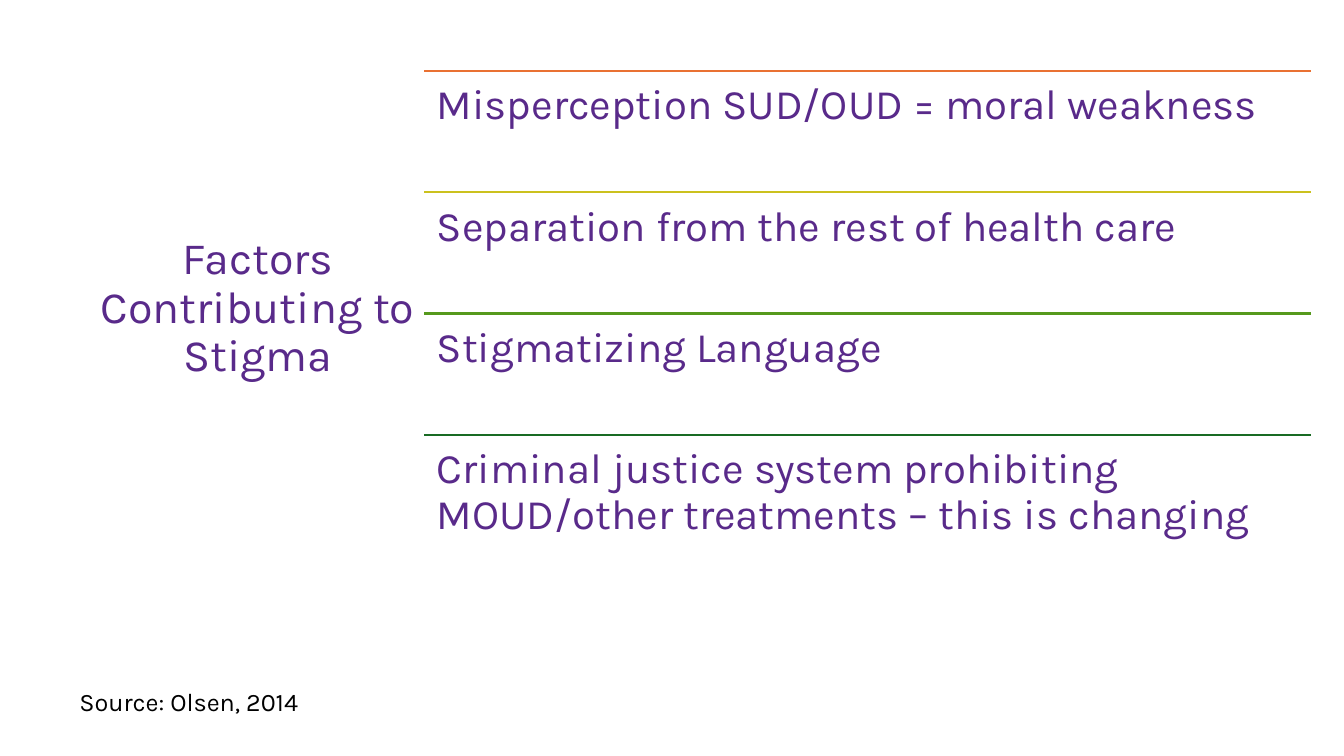
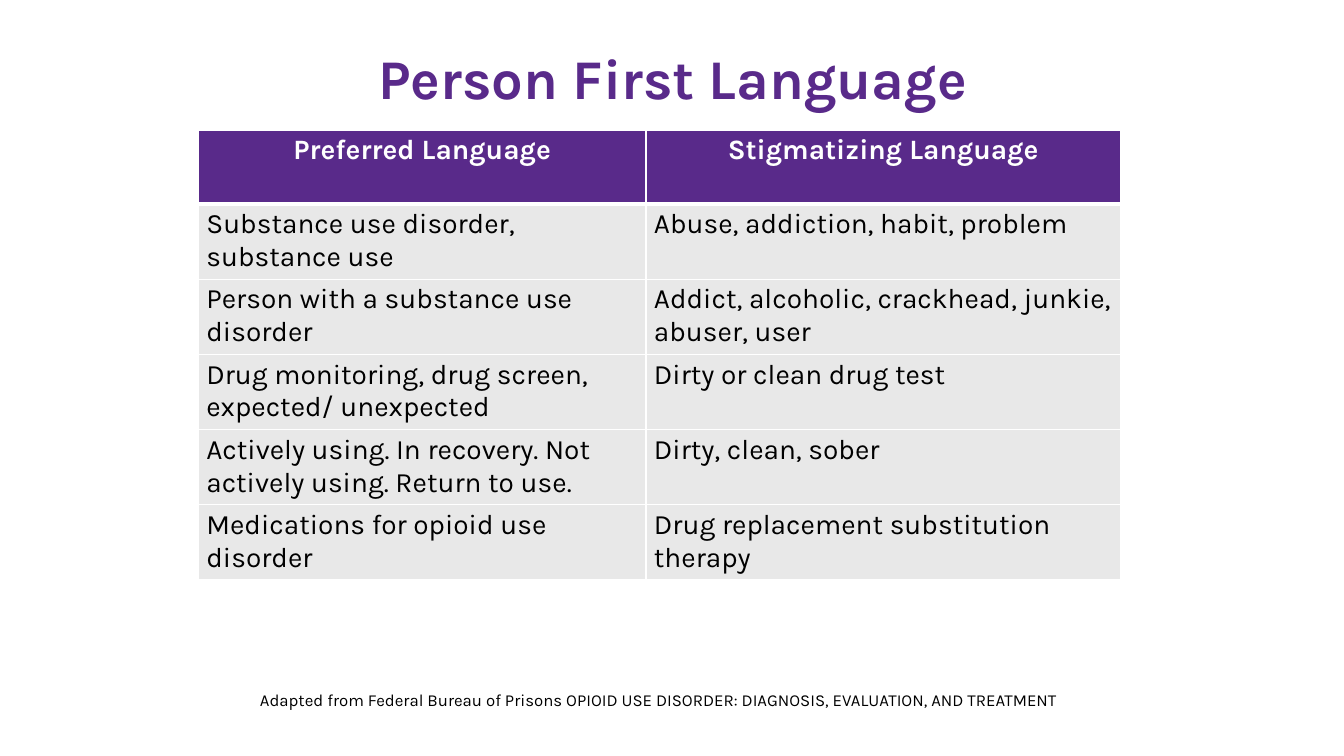
import dataclasses

import lxml.etree
import pptx
import pptx.dml.color
import pptx.enum.shapes
import pptx.enum.text
import pptx.oxml.ns
import pptx.util

Cm = pptx.util.Cm
Pt = pptx.util.Pt
Align = pptx.enum.text.PP_ALIGN
Anchor = pptx.enum.text.MSO_ANCHOR
qn = pptx.oxml.ns.qn

FONT = "Karla"
PURPLE, BLACK, WHITE, GREY = "592A8A", "000000", "FFFFFF", "E8E8E8"


@dataclasses.dataclass(frozen=True)
class Box:
    left: float
    top: float
    width: float
    height: float

    def lengths(self) -> list:
        return [Cm(v) for v in dataclasses.astuple(self)]


@dataclasses.dataclass(frozen=True)
class Style:
    size: float
    color: str = BLACK
    bold: bool = False
    align: Align = Align.LEFT
    spacing: float = 1.0
    anchor: Anchor = Anchor.TOP


@dataclasses.dataclass(frozen=True)
class Factor:
    text: str
    color: str


SIDE_TITLE = Style(32, PURPLE, False, Align.CENTER, 0.9, Anchor.MIDDLE)
TOP_TITLE = dataclasses.replace(SIDE_TITLE, size=40, bold=True)
FACTOR = Style(30, PURPLE, spacing=0.9)
HEADER = Style(20, WHITE, True, Align.CENTER)
BODY = Style(20)

FACTORS = [
    Factor("Misperception SUD/OUD = moral weakness", "E97132"),
    Factor("Separation from the rest of health care", "CBC11E"),
    Factor("Stigmatizing Language", "56991D"),
    Factor("Criminal justice system prohibiting MOUD/other treatments – this is changing", "196B24"),
]
FACTOR_BOX = Box(10.69, 1.78, 22.36, 3.06)

TABLE_BOX = Box(5, 3.28, 23.24, 11.16)
COLUMN_WIDTHS = (11.28, 11.96)
TERMS = [
    ("Preferred Language", "Stigmatizing Language"),
    ("Substance use disorder, substance use", "Abuse, addiction, habit, problem"),
    ("Person with a substance use disorder", "Addict, alcoholic, crackhead, junkie, abuser, user"),
    ("Drug monitoring, drug screen, expected/ unexpected", "Dirty or clean drug test"),
    ("Actively using. In recovery. Not actively using. Return to use.", "Dirty, clean, sober"),
    ("Medications for opioid use disorder", "Drug replacement substitution therapy"),
]


def rgb(color: str) -> pptx.dml.color.RGBColor:
    return pptx.dml.color.RGBColor.from_string(color)


def write(tf, text: str, style: Style) -> None:
    p = tf.paragraphs[0]
    p.alignment, p.line_spacing = style.align, style.spacing
    r = p.add_run()
    r.text = text
    formats = {"name": FONT, "size": Pt(style.size), "bold": style.bold}
    for name, value in formats.items():
        setattr(r.font, name, value)
    r.font.color.rgb = rgb(style.color)


def add_text(s, box: Box, text: str, style: Style, inset: float | None = None) -> None:
    tf = s.shapes.add_textbox(*box.lengths()).text_frame
    tf.word_wrap = True
    tf.vertical_anchor = style.anchor
    if inset is not None:
        for side in ("left", "top", "right", "bottom"):
            setattr(tf, f"margin_{side}", Cm(inset))
    write(tf, text, style)


def add_rule(s, box: Box, color: str) -> None:
    """Draw a line along the top edge of the box."""
    left, top, width, _ = box.lengths()
    line = s.shapes.add_connector(
        pptx.enum.shapes.MSO_CONNECTOR.STRAIGHT, left, top, left + width, top)
    line.line.color.rgb = rgb(color)
    line.line.width = Pt(1.5)
    lxml.etree.SubElement(line._element.spPr, qn("a:effectLst"))


def set_borders(cell, widths: dict[str, float], color: str) -> None:
    tc_pr = cell._tc.get_or_add_tcPr()
    for i, (side, width) in enumerate(widths.items()):
        ln = lxml.etree.Element(qn(f"a:ln{side}"), w=str(Pt(width)))
        fill = lxml.etree.SubElement(ln, qn("a:solidFill"))
        lxml.etree.SubElement(fill, qn("a:srgbClr"), val=color)
        tc_pr.insert(i, ln)


def add_terms_table(s) -> None:
    table = s.shapes.add_table(len(TERMS), len(COLUMN_WIDTHS), *TABLE_BOX.lengths()).table
    table.horz_banding = False
    for column, width in zip(table.columns, COLUMN_WIDTHS):
        column.width = Cm(width)
    margins = {"margin_left": 0.2, "margin_right": 0.2, "margin_top": 0.1, "margin_bottom": 0.1}
    for i, row in enumerate(TERMS):
        table.rows[i].height = Cm(TABLE_BOX.height / len(TERMS))
        for j, text in enumerate(row):
            cell = table.cell(i, j)
            for name, value in margins.items():
                setattr(cell, name, Cm(value))
            cell.fill.solid()
            cell.fill.fore_color.rgb = rgb(GREY if i else PURPLE)
            widths = {"L": 1, "R": 1, "T": 3 if i == 1 else 1, "B": 1 if i else 3}
            set_borders(cell, widths, WHITE)
            write(cell.text_frame, text, BODY if i else HEADER)


def add_slide(prs, title: str, title_box: Box, title_style: Style,
              source: str, source_box: Box, source_size: float):
    """Add a blank slide with its title and source note."""
    s = prs.slides.add_slide(prs.slide_layouts[6])
    add_text(s, title_box, title, title_style)
    add_text(s, source_box, source, Style(source_size))
    return s


def main() -> None:
    prs = pptx.Presentation()
    prs.slide_width, prs.slide_height = Cm(33.87), Cm(19.05)

    s = add_slide(prs, "Factors Contributing to Stigma", Box(1.75, 1.78, 9.5, 12), SIDE_TITLE,
                  "Source: Olsen, 2014", Box(1.75, 17.17, 7.8, 1.03), 18)
    for i, factor in enumerate(FACTORS):
        box = dataclasses.replace(FACTOR_BOX, top=FACTOR_BOX.top + i * FACTOR_BOX.height)
        add_rule(s, box, factor.color)
        add_text(s, box, factor.text, FACTOR, inset=0.32)

    s = add_slide(prs, "Person First Language", Box(6, 0.81, 21.9, 2.46), TOP_TITLE,
                  "Adapted from Federal Bureau of Prisons OPIOID USE DISORDER: "
                  "DIAGNOSIS, EVALUATION, AND TREATMENT", Box(6.3, 17.25, 23.62, 0.77), 12)
    add_terms_table(s)

    prs.save("out.pptx")


if __name__ == "__main__":
    main()
